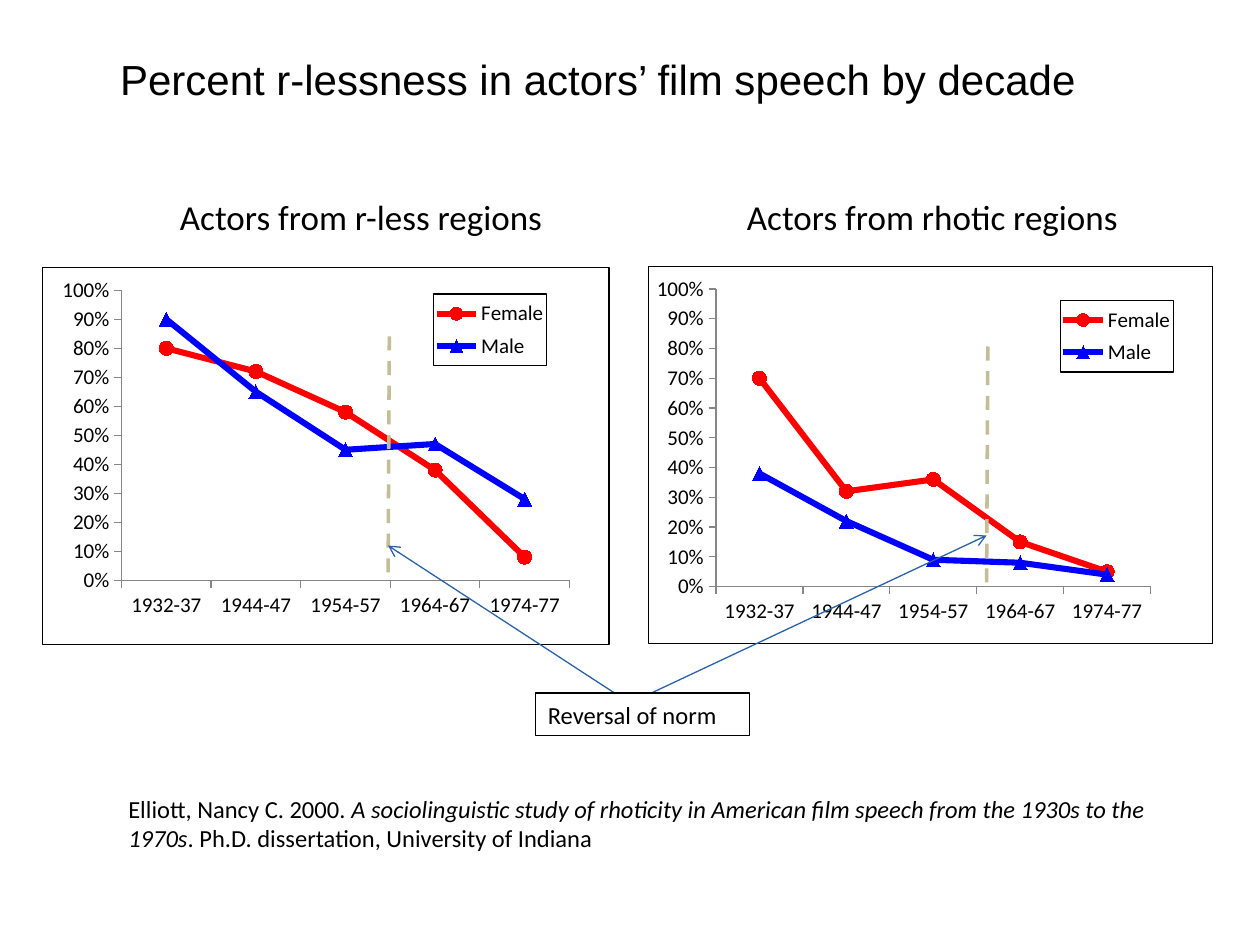
from dataclasses import dataclass

from lxml import etree
from pptx import Presentation
from pptx.chart.data import CategoryChartData
from pptx.dml.color import RGBColor
from pptx.enum.chart import XL_CHART_TYPE, XL_LEGEND_POSITION, XL_MARKER_STYLE, XL_TICK_MARK
from pptx.enum.dml import MSO_LINE
from pptx.enum.shapes import MSO_CONNECTOR, MSO_SHAPE
from pptx.enum.text import MSO_ANCHOR, MSO_AUTO_SIZE, PP_ALIGN
from pptx.oxml import parse_xml
from pptx.oxml.ns import nsdecls, qn
from pptx.util import Inches, Pt

LINE_MARKERS = XL_CHART_TYPE.LINE_MARKERS
LEGEND_RIGHT = XL_LEGEND_POSITION.RIGHT
CIRCLE, TRIANGLE = XL_MARKER_STYLE.CIRCLE, XL_MARKER_STYLE.TRIANGLE
TICK_OUT, TICK_NONE = XL_TICK_MARK.OUTSIDE, XL_TICK_MARK.NONE
DASH = MSO_LINE.DASH
STRAIGHT = MSO_CONNECTOR.STRAIGHT
RECTANGLE = MSO_SHAPE.RECTANGLE
MIDDLE = MSO_ANCHOR.MIDDLE
FIT_SHAPE = MSO_AUTO_SIZE.SHAPE_TO_FIT_TEXT
LEFT, CENTER = PP_ALIGN.LEFT, PP_ALIGN.CENTER


@dataclass(frozen=True)
class Theme:
    heading_font: str = "Arial"
    body_font: str = "Calibri"
    black: str = "000000"
    white: str = "FFFFFF"
    female: str = "FF0000"
    male: str = "0000FF"
    axis: str = "868686"
    divider: str = "C4BD97"
    arrow: str = "2A62A8"
    title_size: float = 24
    label_size: float = 20
    note_size: float = 14
    chart_size: float = 12
    thin: float = 0.75
    divider_width: float = 2
    series_width: float = 3.5
    marker_size: int = 8


THEME = Theme()
Box = tuple[float, float, float, float]
Point = tuple[float, float]
PERIODS = ("1932-37", "1944-47", "1954-57", "1964-67", "1974-77")


@dataclass(frozen=True)
class Panel:
    label: str
    label_left: float
    frame: Box
    plot: Box
    legend: Box
    female: tuple[float, ...]
    male: tuple[float, ...]


@dataclass(frozen=True)
class Rule:
    start: Point
    end: Point
    color: str
    width: float
    dashed: bool = False
    arrow: bool = False


PANELS = (
    Panel("Actors from rhotic regions", 5.83, (5.14, 2.11, 4.49, 3),
          (0.12, 0.06, 0.77, 0.79), (0.73, 0.09, 0.2, 0.19),
          (0.7, 0.32, 0.36, 0.15, 0.05), (0.38, 0.22, 0.09, 0.08, 0.04)),
    Panel("Actors from r-less regions", 1.33, (0.33, 2.12, 4.51, 3),
          (0.14, 0.06, 0.79, 0.77), (0.69, 0.07, 0.2, 0.19),
          (0.8, 0.72, 0.58, 0.38, 0.08), (0.9, 0.65, 0.45, 0.47, 0.28)),
)
RULES = (
    Rule((3.09, 2.67), (3.08, 4.59), THEME.divider, THEME.divider_width, dashed=True),
    Rule((7.84, 2.75), (7.83, 4.67), THEME.divider, THEME.divider_width, dashed=True),
    Rule((5, 5.58), (3.08, 4.33), THEME.arrow, THEME.thin, arrow=True),
    Rule((5, 5.58), (7.83, 4.25), THEME.arrow, THEME.thin, arrow=True),
)


def rgb(color: str) -> RGBColor:
    return RGBColor.from_string(color)


def add_run(p, text: str, size: float, font: str = THEME.body_font, italic: bool = False) -> None:
    r = p.add_run()
    r.text = text
    r.font.name = font
    r.font.size = Pt(size)
    r.font.italic = italic
    r.font.color.rgb = rgb(THEME.black)


def style_line(line, color: str, width: float) -> None:
    line.color.rgb = rgb(color)
    line.width = Pt(width)


def add_text_box(s, box: Box, wrap: bool):
    sp = s.shapes.add_textbox(*map(Inches, box))
    tf = sp.text_frame
    tf.word_wrap = wrap
    tf.auto_size = FIT_SHAPE
    return tf.paragraphs[0]


def layout_xml(box: Box, inner: bool = False):
    target = '<c:layoutTarget val="inner"/>' if inner else ""
    modes = '<c:xMode val="edge"/><c:yMode val="edge"/>'
    sizes = "".join(f'<c:{key} val="{value}"/>' for key, value in zip("xywh", box))
    return parse_xml(f'<c:layout {nsdecls("c")}><c:manualLayout>{target}{modes}{sizes}'
                     '</c:manualLayout></c:layout>')


def border_xml():
    return parse_xml(
        f'<c:spPr {nsdecls("c", "a")}><a:solidFill><a:srgbClr val="{THEME.white}"/></a:solidFill>'
        f'<a:ln w="{Pt(THEME.thin)}"><a:solidFill><a:srgbClr val="{THEME.black}"/></a:solidFill>'
        '</a:ln></c:spPr>')


def drop_layout(parent) -> None:
    for layout in parent.findall(qn("c:layout")):
        parent.remove(layout)


def place_chart_parts(chart, panel: Panel) -> None:
    root = chart.element.find(qn("c:chart"))
    root.addnext(border_xml())
    plot, legend = root.find(qn("c:plotArea")), root.find(qn("c:legend"))
    drop_layout(plot)
    drop_layout(legend)
    plot.insert(0, layout_xml(panel.plot, inner=True))
    legend.find(qn("c:legendPos")).addnext(layout_xml(panel.legend))
    legend.find(qn("c:overlay")).addnext(border_xml())


def add_panel(s, panel: Panel) -> None:
    data = CategoryChartData(number_format="0%")
    data.categories = PERIODS
    data.add_series("Female", panel.female)
    data.add_series("Male", panel.male)
    chart = s.shapes.add_chart(LINE_MARKERS, *map(Inches, panel.frame), data).chart
    chart.has_title = False
    chart.font.name = THEME.body_font
    chart.font.size = Pt(THEME.chart_size)
    chart.font.color.rgb = rgb(THEME.black)
    chart.has_legend = True
    chart.legend.position = LEGEND_RIGHT
    chart.legend.include_in_layout = False
    chart.legend.font.size = Pt(THEME.chart_size)
    for axis in (chart.category_axis, chart.value_axis):
        axis.has_major_gridlines = False
        axis.major_tick_mark = TICK_OUT
        axis.minor_tick_mark = TICK_NONE
        axis.tick_labels.font.size = Pt(THEME.chart_size)
        style_line(axis.format.line, THEME.axis, THEME.thin)
    values = chart.value_axis
    values.minimum_scale, values.maximum_scale, values.major_unit = 0, 1, 0.1
    values.tick_labels.number_format = "0%"
    values.tick_labels.number_format_is_linked = False
    chart.plots[0].vary_by_categories = False
    looks = ((THEME.female, CIRCLE), (THEME.male, TRIANGLE))
    for series, (color, marker) in zip(chart.plots[0].series, looks):
        series.smooth = False
        style_line(series.format.line, color, THEME.series_width)
        series.marker.style = marker
        series.marker.size = THEME.marker_size
        series.marker.format.fill.solid()
        series.marker.format.fill.fore_color.rgb = rgb(color)
        style_line(series.marker.format.line, color, THEME.thin)
    place_chart_parts(chart, panel)
    p = add_text_box(s, (panel.label_left, 1.5, 3.41, 0.44), wrap=False)
    add_run(p, panel.label, THEME.label_size)


def add_rule(s, rule: Rule) -> None:
    line = s.shapes.add_connector(STRAIGHT, *map(Inches, rule.start + rule.end))
    style_line(line.line, rule.color, rule.width)
    if rule.dashed:
        line.line.dash_style = DASH
    if rule.arrow:
        etree.SubElement(line.line._get_or_add_ln(), qn("a:tailEnd"), type="arrow")
    etree.SubElement(line._element.spPr, qn("a:effectLst"))


def add_callout(s, text: str, box: Box) -> None:
    sp = s.shapes.add_shape(RECTANGLE, *map(Inches, box))
    sp.shadow.inherit = False
    sp.fill.solid()
    sp.fill.fore_color.rgb = rgb(THEME.white)
    style_line(sp.line, THEME.black, THEME.thin)
    tf = sp.text_frame
    tf.word_wrap = False
    tf.auto_size = FIT_SHAPE
    p = tf.paragraphs[0]
    p.alignment = LEFT
    add_run(p, text, THEME.note_size)


def main() -> None:
    prs = Presentation()
    prs.slide_width, prs.slide_height = Inches(10), Inches(7.5)
    s = prs.slides.add_slide(prs.slide_layouts[5])
    title = s.shapes.title
    title.left, title.top, title.width, title.height = map(Inches, (0.33, 0.25, 8.83, 0.75))
    title.text_frame.vertical_anchor = MIDDLE
    p = title.text_frame.paragraphs[0]
    p.alignment = CENTER
    add_run(p, "Percent r-lessness in actors’ film speech by decade",
            THEME.title_size, THEME.heading_font)
    for panel in PANELS:
        add_panel(s, panel)
    p = add_text_box(s, (0.92, 6.25, 8.33, 0.57), wrap=True)
    add_run(p, "Elliott, Nancy C. 2000. ", THEME.note_size)
    add_run(p, "A sociolinguistic study of rhoticity in American film speech "
            "from the 1930s to the 1970s", THEME.note_size, italic=True)
    add_run(p, ". Ph.D. dissertation, University of Indiana", THEME.note_size)
    for rule in RULES:
        add_rule(s, rule)
    add_callout(s, "Reversal of norm", (4.25, 5.5, 1.7, 0.34))
    prs.save("out.pptx")


if __name__ == "__main__":
    main()
